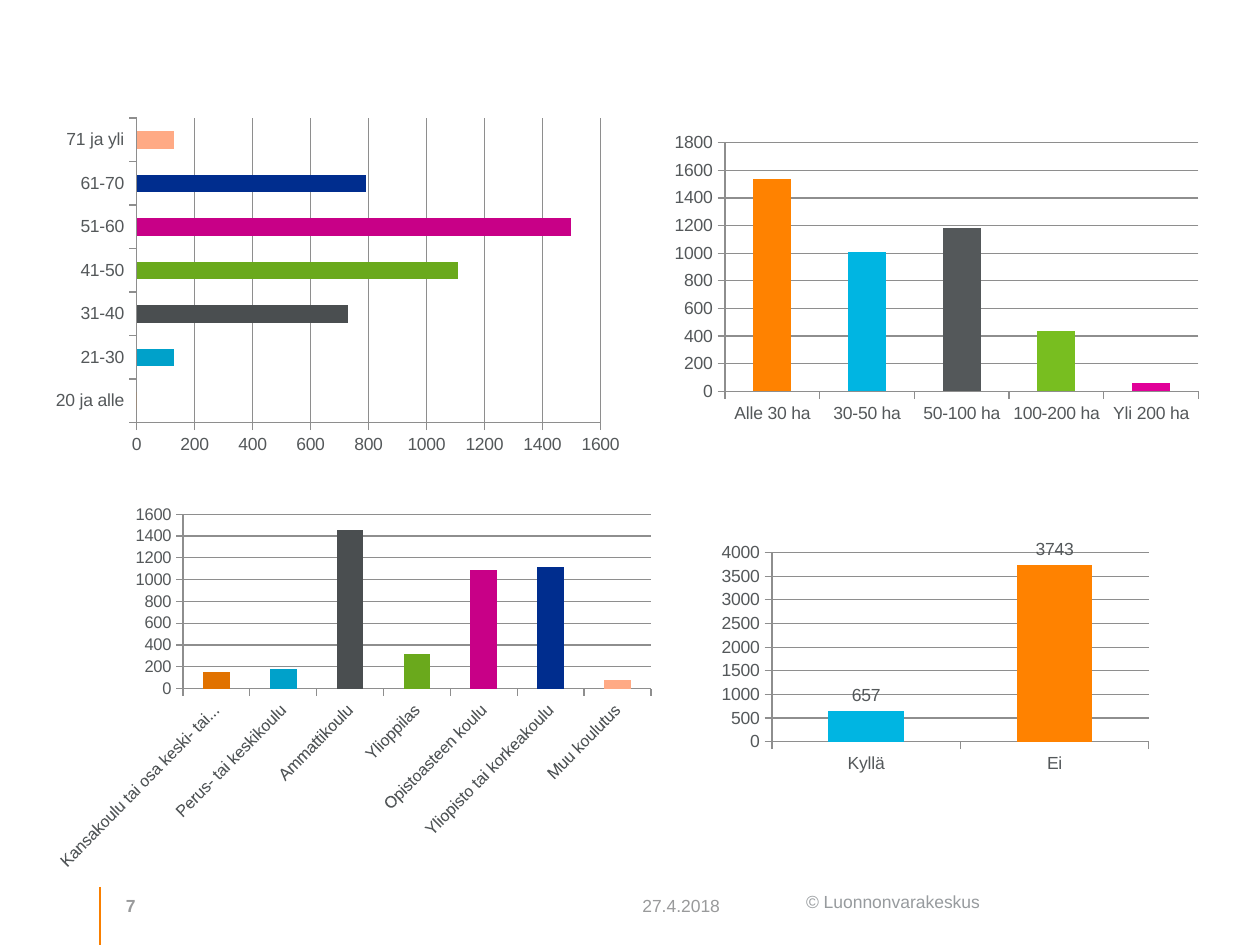
from dataclasses import dataclass

from lxml import etree
from pptx import Presentation
from pptx import util as u
from pptx.chart.data import CategoryChartData
from pptx.dml.color import RGBColor
from pptx.enum import chart as ch, shapes, text
from pptx.oxml import parse_xml
from pptx.oxml.ns import nsdecls, qn

FONT = "Arial"
BRIGHT = ("FF8200", "00B5E2", "54585A", "78BE20", "E10098")
MUTED = ("E17200", "00A1CA", "4A4E50", "6AA91C", "C80087", "002D8E", "FFAA85")


@dataclass
class Bars:
    box: tuple[float, float, float, float]
    plot: tuple[float, float, float, float]
    counts: dict[str, int]
    colours: tuple[str, ...]
    top: int
    step: int = 200
    kind: ch.XL_CHART_TYPE = ch.XL_CHART_TYPE.COLUMN_CLUSTERED
    label_angle: int = 0
    labelled: bool = False


@dataclass
class FooterText:
    wording: str
    box: tuple[float, float, float, float]
    colour: str = "999A9B"
    anchor: text.MSO_ANCHOR = text.MSO_ANCHOR.BOTTOM
    bold: bool = False


def rgb(code: str) -> RGBColor:
    return RGBColor.from_string(code)


def apply(target, formats: dict) -> None:
    for name, value in formats.items():
        setattr(target, name, value)


def cm(lengths) -> list:
    return [u.Cm(length) for length in lengths]


def style_line(line, colour: str, width: float) -> None:
    line.color.rgb = rgb(colour)
    line.width = u.Pt(width)


def place_plot(chart, fractions) -> None:
    plot_area = chart.element.find(f".//{qn('c:plotArea')}")
    for layout in plot_area.findall(qn("c:layout")):
        plot_area.remove(layout)
    layout = parse_xml(f"<c:layout {nsdecls('c')}><c:manualLayout/></c:layout>")
    settings = [("layoutTarget", "inner"), ("xMode", "edge"), ("yMode", "edge")]
    settings += zip("xywh", map(str, fractions))
    for tag, value in settings:
        etree.SubElement(layout[0], qn(f"c:{tag}")).set("val", value)
    plot_area.insert(0, layout)


def draw_bars(slide, bars: Bars) -> None:
    data = CategoryChartData()
    data.categories = list(bars.counts)
    data.add_series("Series 1", list(bars.counts.values()))
    chart = slide.shapes.add_chart(bars.kind, *cm(bars.box), data).chart
    apply(chart, {"has_legend": False, "has_title": False})
    apply(chart.font, {"name": FONT, "size": u.Pt(10)})
    chart.font.color.rgb = rgb("54585A")
    place_plot(chart, bars.plot)

    categories, values = chart.category_axis, chart.value_axis
    for axis in (categories, values):
        apply(axis, {"major_tick_mark": ch.XL_TICK_MARK.OUTSIDE,
                     "minor_tick_mark": ch.XL_TICK_MARK.NONE})
        style_line(axis.format.line, "8E8E8E", 0.75)
    apply(values, {"minimum_scale": 0, "maximum_scale": bars.top,
                   "major_unit": bars.step, "has_major_gridlines": True})
    style_line(values.major_gridlines.format.line, "8E8E8E", 0.75)
    if bars.label_angle:
        apply(categories.tick_labels.font, {"name": FONT, "size": u.Pt(10)})
        categories.tick_labels.font.color.rgb = rgb("54585A")
        body = chart.element.find(f".//{qn('c:catAx')}/{qn('c:txPr')}/{qn('a:bodyPr')}")
        body.set("rot", str(bars.label_angle * 60000))

    plot = chart.plots[0]
    apply(plot, {"gap_width": 150, "vary_by_categories": False,
                 "has_data_labels": bars.labelled})
    if bars.labelled:
        apply(plot.data_labels, {"show_value": True,
                                 "position": ch.XL_LABEL_POSITION.OUTSIDE_END})
    for index, colour in enumerate(bars.colours):
        fill = plot.series[0].points[index].format.fill
        fill.solid()
        fill.fore_color.rgb = rgb(colour)


def draw_footer_text(slide, footer: FooterText) -> None:
    frame = slide.shapes.add_textbox(*cm(footer.box)).text_frame
    apply(frame, {"word_wrap": True, "vertical_anchor": footer.anchor})
    run = frame.paragraphs[0].add_run()
    run.text = footer.wording
    apply(run.font, {"name": FONT, "size": u.Pt(10), "bold": footer.bold})
    run.font.color.rgb = rgb(footer.colour)


def draw_footer_rule(slide) -> None:
    rule = slide.shapes.add_connector(
        shapes.MSO_CONNECTOR.STRAIGHT, *cm((2.01, 17.88, 2.01, 19.05)))
    style_line(rule.line, "F97F00", 1)
    etree.SubElement(rule.element.spPr, qn("a:effectLst"))


AGES = Bars(
    (0.86, 2.24, 11.84, 7.06), (0.16, 0.02, 0.79, 0.87),
    {"20 ja alle": 0, "21-30": 130, "31-40": 730, "41-50": 1110,
     "51-60": 1500, "61-70": 790, "71 ja yli": 130},
    MUTED, 1600, kind=ch.XL_CHART_TYPE.BAR_CLUSTERED)
EDUCATION = Bars(
    (1.14, 9.93, 12.7, 7.62), (0.15, 0.06, 0.79, 0.48),
    {"Kansakoulu tai osa keski- tai peruskoulua": 150,
     "Perus- tai keskikoulu": 180, "Ammattikoulu": 1460, "Ylioppilas": 320,
     "Opistoasteen koulu": 1090, "Yliopisto tai korkeakoulu": 1120,
     "Muu koulutus": 80},
    MUTED, 1600, label_angle=-45)
FIELD_AREA = Bars(
    (13.41, 2.57, 10.97, 6.12), (0.11, 0.05, 0.87, 0.82),
    {"Alle 30 ha": 1540, "30-50 ha": 1010, "50-100 ha": 1180,
     "100-200 ha": 440, "Yli 200 ha": 60},
    BRIGHT, 1800)
YES_NO = Bars(
    (14.4, 10.85, 8.94, 4.83), (0.13, 0.06, 0.85, 0.79),
    {"Kyllä": 657, "Ei": 3743},
    (BRIGHT[1], BRIGHT[0]), 4000, step=500, labelled=True)

FOOTER = (
    FooterText("© Luonnonvarakeskus", (16, 17.83, 4.93, 0.69), "979B9E",
               text.MSO_ANCHOR.TOP),
    FooterText("7", (2.29, 17.83, 1.24, 0.76), bold=True),
    FooterText("27.4.2018", (12.7, 17.83, 3.12, 0.76)),
)


def main() -> None:
    deck = Presentation()
    apply(deck, {"slide_width": u.Cm(25.4), "slide_height": u.Cm(19.05)})
    slide = deck.slides.add_slide(deck.slide_layouts[6])
    draw_footer_rule(slide)
    for footer in FOOTER:
        draw_footer_text(slide, footer)
    for bars in (AGES, EDUCATION, FIELD_AREA, YES_NO):
        draw_bars(slide, bars)
    deck.save("out.pptx")


if __name__ == "__main__":
    main()
